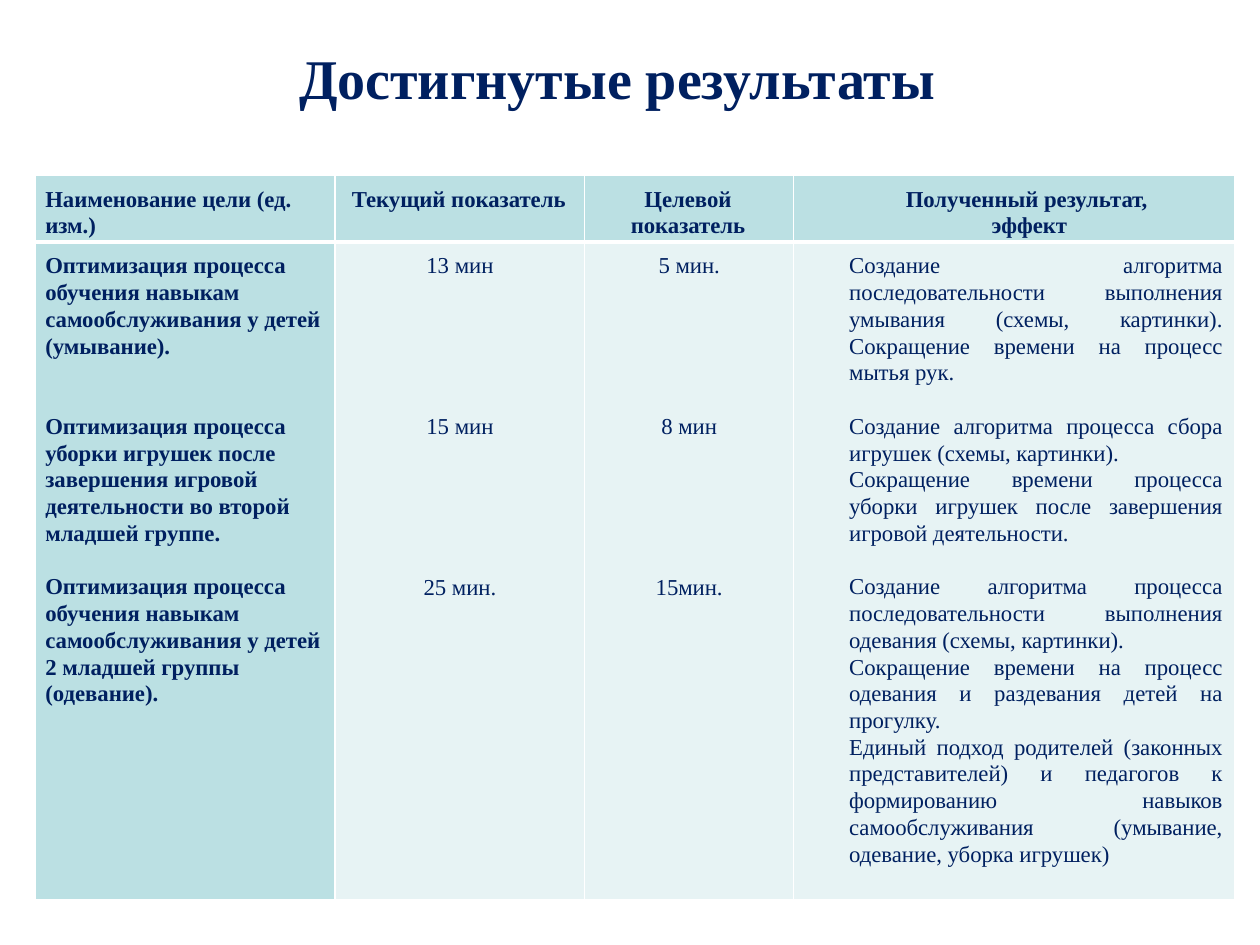
from dataclasses import dataclass

from lxml.etree import SubElement
from pptx import Presentation
from pptx.dml.color import RGBColor
from pptx.enum.text import MSO_ANCHOR, PP_ALIGN as Align
from pptx.oxml.ns import qn
from pptx.util import Inches, Pt


@dataclass(frozen=True)
class Theme:
    font: str = "Times New Roman"
    ink: str = "002060"
    accent: str = "BBE0E3"
    pale: str = "E7F3F4"
    border: str = "FFFFFF"
    title_size: float = 32
    text_size: float = 13
    line_spacing: float = 1.07
    line_pitch: float = 15.3  # points from one line of table text to the next


THEME = Theme()
COLUMN_WIDTHS = (2.38, 1.98, 1.66, 3.5)
ROW_HEIGHTS = (0.53, 5.22)
HEADER_INDENTS = (0, 0, 0, 0.26)
BODY_INDENTS = (0, 0.02, 0.02, 0.36)
HEADER_ALIGNS = (Align.LEFT, Align.CENTER, Align.CENTER, Align.CENTER)
BODY_ALIGNS = (Align.LEFT, Align.CENTER, Align.CENTER, Align.JUSTIFY)

# Each paragraph is (lines of space above it, text).
HEADERS = (
    [(0, "Наименование цели (ед. изм.)")],
    [(0, "Текущий показатель")],
    [(0, "Целевой показатель")],
    [(0, "Полученный результат, "), (0, "эффект")],
)
RESULTS = (
    [
        (0, "Оптимизация процесса обучения навыкам самообслуживания у детей (умывание)."),
        (2, "Оптимизация процесса уборки игрушек после завершения игровой "
            "деятельности во второй младшей группе."),
        (1, "Оптимизация процесса обучения навыкам самообслуживания у детей "
            "2 младшей группы"),
        (0, "(одевание)."),
    ],
    [(0, "13 мин"), (5, "15 мин"), (5, "25 мин.")],
    [(0, "5 мин."), (5, "8 мин"), (5, "15мин.")],
    [
        (0, "Создание алгоритма последовательности выполнения умывания "
            "(схемы, картинки). Сокращение времени на процесс мытья рук."),
        (1, "Создание алгоритма процесса сбора игрушек (схемы, картинки)."),
        (0, "Сокращение времени процесса уборки игрушек после завершения "
            "игровой деятельности."),
        (1, "Создание алгоритма процесса последовательности выполнения "
            "одевания (схемы, картинки)."),
        (0, "Сокращение времени на процесс одевания и раздевания детей на прогулку."),
        (0, "Единый подход родителей (законных представителей) и педагогов "
            "к формированию навыков самообслуживания (умывание, одевание, "
            "уборка игрушек)"),
    ],
)


def add_run(paragraph, text, size, bold):
    run = paragraph.add_run()
    run.text = text
    run.font.name = THEME.font
    run.font.size = Pt(size)
    run.font.bold = bold
    run.font.color.rgb = RGBColor.from_string(THEME.ink)


def add_title(slide, left, top, width, height):
    title = slide.shapes.title
    title.left, title.top, title.width, title.height = left, top, width, height
    frame = title.text_frame
    frame.word_wrap = False
    frame.vertical_anchor = MSO_ANCHOR.MIDDLE
    paragraph = frame.paragraphs[0]
    paragraph.alignment = Align.CENTER
    add_run(paragraph, "Достигнутые результаты", THEME.title_size, True)


def set_borders(cell, **widths):
    """Draw the cell's edges; widths maps L, R, T and B to points."""
    properties = cell._tc.get_or_add_tcPr()
    for side, width in widths.items():
        line = SubElement(properties, qn(f"a:ln{side}"), w=str(Pt(width)))
        fill = SubElement(line, qn("a:solidFill"))
        SubElement(fill, qn("a:srgbClr"), val=THEME.border)


def fill_cell(cell, paragraphs, alignment, indent, bold, color):
    cell.margin_left = cell.margin_top = Inches(0.08)
    cell.margin_right, cell.margin_bottom = Inches(0.1), 0
    cell.vertical_anchor = MSO_ANCHOR.TOP
    cell.fill.solid()
    cell.fill.fore_color.rgb = RGBColor.from_string(color)
    frame = cell.text_frame
    for index, (gap_lines, text) in enumerate(paragraphs):
        paragraph = frame.add_paragraph() if index else frame.paragraphs[0]
        paragraph.alignment = alignment
        paragraph.line_spacing = THEME.line_spacing
        if gap_lines:
            paragraph.space_before = Pt(gap_lines * THEME.line_pitch)
        paragraph._p.get_or_add_pPr().set("marL", str(Inches(indent)))
        add_run(paragraph, text, THEME.text_size, bold)


def add_results_table(slide, left, top, width, height):
    table = slide.shapes.add_table(
        len(ROW_HEIGHTS), len(COLUMN_WIDTHS), left, top, width, height).table
    table.horz_banding = False
    for row, share in zip(table.rows, ROW_HEIGHTS):
        row.height = int(height * share / sum(ROW_HEIGHTS))
    for column, share in zip(table.columns, COLUMN_WIDTHS):
        column.width = int(width * share / sum(COLUMN_WIDTHS))

    for index in range(len(COLUMN_WIDTHS)):
        header, body = table.cell(0, index), table.cell(1, index)
        set_borders(header, L=1, R=1, T=1, B=3)
        set_borders(body, L=1, R=1, T=3, B=1)
        fill_cell(header, HEADERS[index], HEADER_ALIGNS[index],
                  HEADER_INDENTS[index], True, THEME.accent)
        is_goal = index == 0
        fill_cell(body, RESULTS[index], BODY_ALIGNS[index], BODY_INDENTS[index],
                  is_goal, THEME.accent if is_goal else THEME.pale)


def main():
    presentation = Presentation()
    presentation.slide_width, presentation.slide_height = Inches(10), Inches(7.5)
    slide = presentation.slides.add_slide(presentation.slide_layouts[5])
    add_title(slide, Inches(2.25), Inches(0.29), Inches(5.3), Inches(0.64))
    add_results_table(slide, Inches(0.28), Inches(1.39),
                      Inches(sum(COLUMN_WIDTHS)), Inches(sum(ROW_HEIGHTS)))
    presentation.save("out.pptx")


if __name__ == "__main__":
    main()
